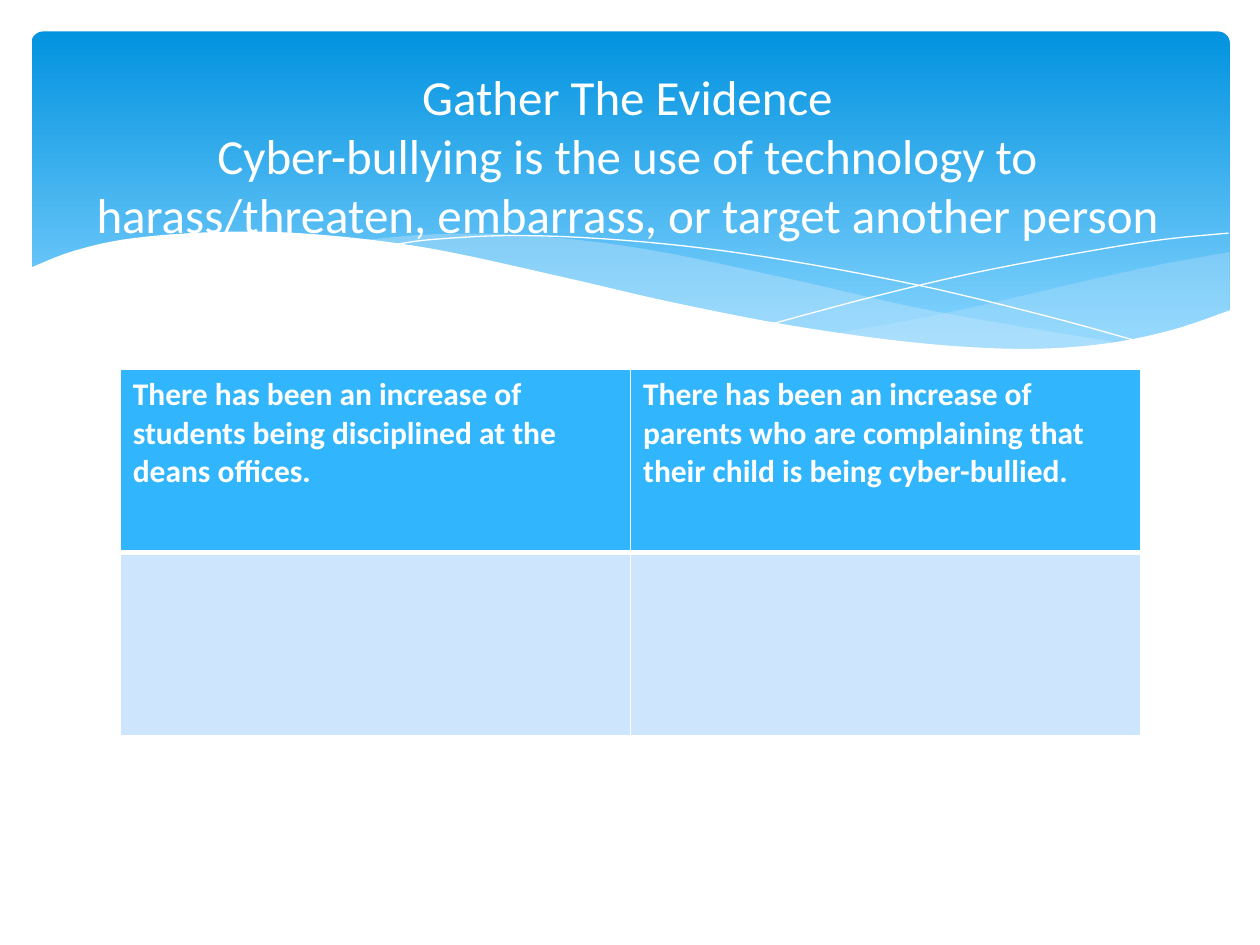
from lxml.etree import SubElement
from pptx import Presentation
from pptx.dml.color import RGBColor
from pptx.enum.shapes import MSO_SHAPE as SHAPE
from pptx.enum.text import MSO_ANCHOR as ANCHOR, PP_ALIGN as ALIGN
from pptx.oxml.ns import qn
from pptx.util import Pt

WHITE = RGBColor(0xFF, 0xFF, 0xFF)
BANNER_TOP = RGBColor(0x02, 0x93, 0xE0)
BANNER_BOTTOM = RGBColor(0x83, 0xD3, 0xFE)
WAVE = RGBColor(0xC6, 0xE7, 0xFC)
HEADER = RGBColor(0x31, 0xB6, 0xFD)
BODY = RGBColor(0xCE, 0xE5, 0xFE)

# Each wave is a list of edges; an edge is a smooth curve through its knots
RIGHT_WAVE = [
    [(702.7, 144), (663, 151.2), (620, 160.6), (542, 178.6), (476, 190.8)],
    [(476, 190.8), (527, 197.3), (586, 200.2), (640, 195.8), (678, 186.5),
     (702.7, 177.8)],
]
MIDDLE_WAVE = [
    [(206, 137.5), (247.7, 133.9), (302.4, 134.6), (370, 142.6),
     (453, 159.8), (533.5, 177.8), (643, 196.6)],
    [(643, 196.6), (589, 200.2), (530, 198), (456.5, 188), (381.6, 172.8),
     (307.4, 155.5), (246.2, 143.3), (206, 137.5)],
]
FALLING_LINE = [
    [(222.5, 140.4), (247.7, 136.8), (299.5, 134.6), (367.2, 138.2),
     (437.8, 146.9), (523.4, 162.7), (598.3, 180.7), (653, 195.8)],
]
RISING_LINE = [
    [(441.4, 185), (500.4, 169.2), (558.7, 155.5), (623.5, 143.3),
     (665.3, 136.8), (702, 133.2)],
]
WHITE_WAVE = [
    [(703.4, 177.1), (669.6, 188.6), (630, 196.6), (582.5, 199.4),
     (522.7, 195.8), (450.7, 185.8), (381, 172.1), (321.8, 158.4),
     (244.8, 141.8), (180, 133.9), (127.4, 132.5), (76.3, 136.1),
     (42.5, 143.3), (16.6, 153.4)],
    [(16.6, 236.9), (703.4, 236.9)],
]


def smooth(knots, steps=6):
    """Points of a Catmull-Rom curve through the knots."""
    if len(knots) < 3:
        return knots
    padded = [knots[0], *knots, knots[-1]]
    points = [knots[0]]
    for quad in zip(padded, padded[1:], padded[2:], padded[3:]):
        for i in range(1, steps + 1):
            t = i / steps
            points.append(tuple(
                (2 * b + (c - a) * t + (2 * a - 5 * b + 4 * c - d) * t ** 2
                 + (3 * b - a - 3 * c + d) * t ** 3) / 2
                for a, b, c, d in zip(*quad)))
    return points


class Deck:
    font = "Calibri"

    def __init__(self, width, height):
        self.prs = Presentation()
        self.prs.slide_width, self.prs.slide_height = Pt(width), Pt(height)
        self.s = self.prs.slides.add_slide(self.prs.slide_layouts[5])

    def format_text(self, tf, size, bold=False):
        for p in tf.paragraphs:
            for r in p.runs:
                r.font.name, r.font.size, r.font.bold = self.font, Pt(size), bold
                r.font.color.rgb = WHITE

    def banner(self, x, y, w, h):
        sp = self.s.shapes.add_shape(SHAPE.ROUNDED_RECTANGLE,
                                     Pt(x), Pt(y), Pt(w), Pt(h))
        sp.adjustments[0] = 0.034
        sp.shadow.inherit = False
        sp.line.fill.background()
        sp.fill.gradient()
        sp.fill.gradient_angle = 270
        colors = ((0, BANNER_TOP), (0.9, BANNER_BOTTOM))
        for stop, (position, color) in zip(sp.fill.gradient_stops, colors):
            stop.position, stop.color.rgb = position, color

    def curve(self, edges, closed):
        points = [(Pt(x), Pt(y)) for edge in edges for x, y in smooth(edge)]
        builder = self.s.shapes.build_freeform(*points[0])
        builder.add_line_segments(points[1:], close=closed)
        sp = builder.convert_to_shape()
        sp.shadow.inherit = False
        return sp

    def wave(self, edges, color, opacity=100):
        sp = self.curve(edges, closed=True)
        sp.line.fill.background()
        sp.fill.solid()
        sp.fill.fore_color.rgb = color
        if opacity < 100:
            clr = sp.fill._xPr.find(qn("a:solidFill"))[0]
            SubElement(clr, qn("a:alpha"), val=str(opacity * 1000))

    def thin_line(self, edges):
        sp = self.curve(edges, closed=False)
        sp.fill.background()
        sp.line.color.rgb = WHITE
        sp.line.width = Pt(0)

    def border(self, cell, side, width):
        ln = SubElement(cell._tc.get_or_add_tcPr(), qn("a:ln" + side),
                        w=str(Pt(width)))
        fill = SubElement(ln, qn("a:solidFill"))
        SubElement(fill, qn("a:srgbClr"), val=str(WHITE))

    def table(self, rows, x, y, w, h):
        frame = self.s.shapes.add_table(len(rows), len(rows[0]),
                                        Pt(x), Pt(y), Pt(w), Pt(h))
        for i, texts in enumerate(rows):
            for j, text in enumerate(texts):
                cell = frame.table.cell(i, j)
                top, bottom = (1, 3) if i == 0 else (3, 1)
                for side, width in zip("LRTB", (1, 1, top, bottom)):
                    self.border(cell, side, width)
                cell.fill.solid()
                cell.fill.fore_color.rgb = HEADER if i == 0 else BODY
                if text:
                    cell.text_frame.text = text
                    self.format_text(cell.text_frame, 18, bold=True)

    def title(self, text, x, y, w, h):
        sp = self.s.shapes.title
        sp.left, sp.top, sp.width, sp.height = Pt(x), Pt(y), Pt(w), Pt(h)
        tf = sp.text_frame
        tf.text = text
        tf.word_wrap = True
        tf.vertical_anchor = ANCHOR.MIDDLE
        tf.paragraphs[0].alignment = ALIGN.CENTER
        self.format_text(tf, 28)
        # Bring the title in front of the banner
        self.s.shapes._spTree.append(sp._element)


def main():
    deck = Deck(720, 540)

    # Banner with waves
    deck.banner(18, 18, 684.7, 194.4)
    deck.wave(RIGHT_WAVE, WAVE, 29)
    deck.wave(MIDDLE_WAVE, WAVE, 40)
    deck.thin_line(FALLING_LINE)
    deck.thin_line(RISING_LINE)
    deck.wave(WHITE_WAVE, WHITE)

    # Evidence table
    deck.table([
        ["There has been an increase of students being disciplined at the "
         "deans offices.",
         "There has been an increase of parents who are complaining that "
         "their child is being cyber-bullied."],
        ["", ""],
    ], 68.7, 211, 583.2, 209.2)

    # Title
    deck.title("Gather The Evidence\vCyber-bullying is the use of technology "
               "to harass/threaten, embarrass, or target another person",
               34.5, 39, 648, 99.4)

    deck.prs.save("out.pptx")


if __name__ == "__main__":
    main()
